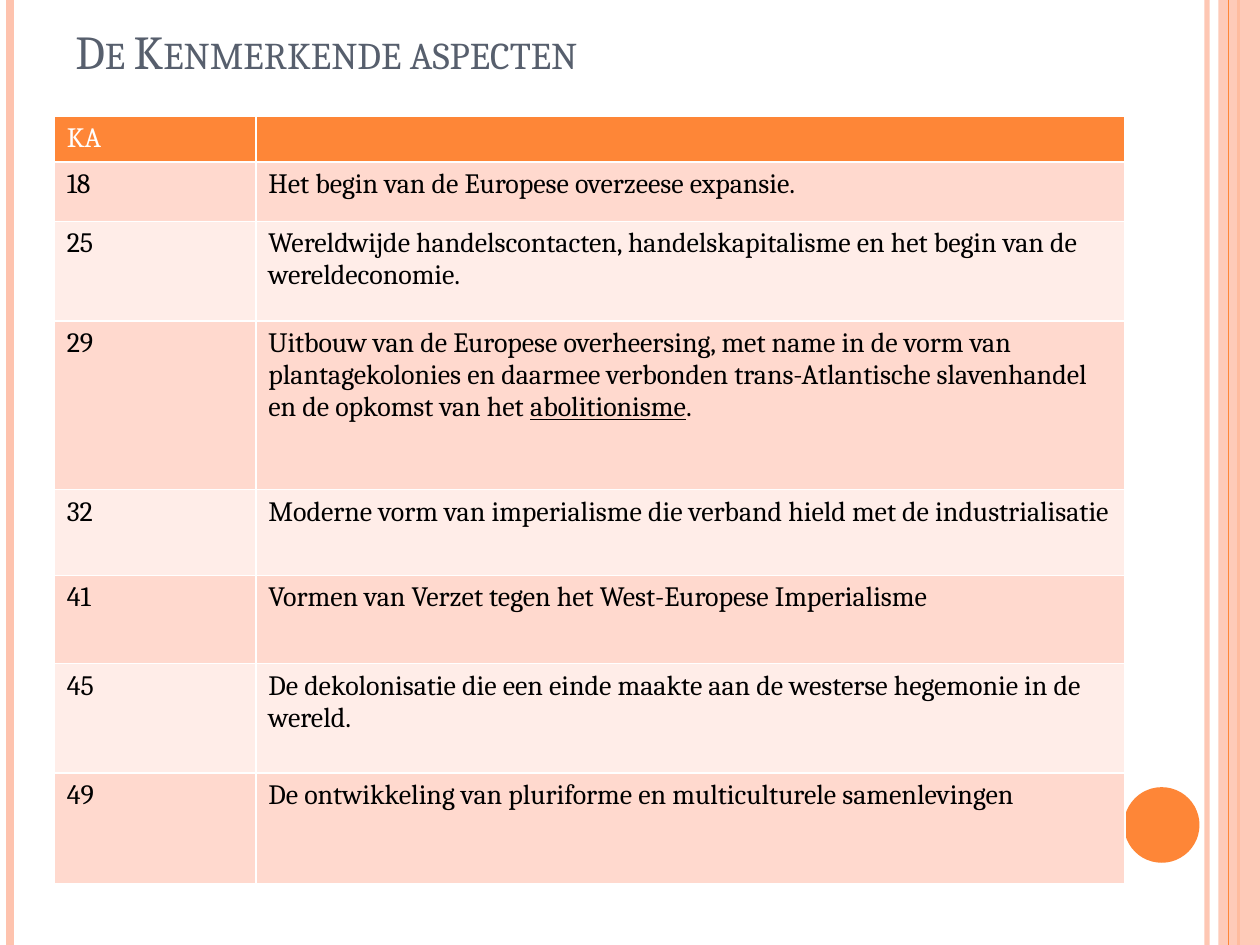
from dataclasses import dataclass

from lxml import etree
from pptx import Presentation
from pptx.dml import color as dml
from pptx.enum import shapes, text
from pptx.oxml import ns
from pptx.util import Inches, Pt

WIDTH, HEIGHT = Inches(10), Inches(7.5)
ORANGE, PEACH, WHITE, BLACK, SLATE = "FE8637", "FEC3AE", "FFFFFF", "000000", "575F6D"
BANDS = ("FFD9CE", "FFEDE8")
FONT = "Cambria"
BODY_SIZE = 16


@dataclass(frozen=True)
class Stripe:
    x: float
    points: float
    hue: str
    opacity: int = 100


@dataclass(frozen=True)
class Aspect:
    number: str
    wording: tuple[str, ...]
    height: float


OUTER_STRIPES = (
    Stripe(0.958, 3, PEACH, 93),
    Stripe(0.008, 4.5, PEACH),
    Stripe(0.983, 1.5, ORANGE),
)
INNER_STRIPE = Stripe(0.975, 0.75, ORANGE)

ASPECTS = (
    Aspect("KA", ("",), 0.35),
    Aspect("18", ("Het begin van de Europese overzeese expansie.",), 0.47),
    Aspect("25", ("Wereldwijde handelscontacten, handelskapitalisme en het begin "
                  "van de wereldeconomie.",), 0.79),
    Aspect("29", ("Uitbouw van de Europese overheersing, met name in de vorm van "
                  "plantagekolonies en daarmee verbonden trans-Atlantische "
                  "slavenhandel en de opkomst van het ", "abolitionisme", "."), 1.34),
    Aspect("32", ("Moderne vorm van imperialisme die verband hield met de "
                  "industrialisatie",), 0.68),
    Aspect("41", ("Vormen van Verzet tegen het West-Europese Imperialisme",), 0.7),
    Aspect("45", ("De dekolonisatie die een einde maakte aan de westerse hegemonie "
                  "in de wereld.",), 0.87),
    Aspect("49", ("De ontwikkeling van pluriforme en multiculturele "
                  "samenlevingen",), 0.88),
)


def rgb(value: str) -> dml.RGBColor:
    return dml.RGBColor.from_string(value)


def paint(fill, hue: str) -> None:
    fill.solid()
    fill.fore_color.rgb = rgb(hue)


def set_opacity(element, percent: int) -> None:
    if percent < 100:
        for value in element.iter(ns.qn("a:srgbClr")):
            etree.SubElement(value, ns.qn("a:alpha"), val=str(percent * 1000))


def write(paragraph, wording: str, *, size: float, hue: str,
          underline: bool = False, small_caps: bool = False) -> None:
    if not wording:
        etree.SubElement(paragraph._p, ns.qn("a:endParaRPr"), sz=str(size * 100))
        return
    run = paragraph.add_run()
    run.text = wording
    font = run.font
    font.name, font.size, font.bold = FONT, Pt(size), False
    font.color.rgb = rgb(hue)
    if underline:
        font.underline = True
    if small_caps:
        run._r.get_or_add_rPr().set("cap", "small")


def draw_stripe(slide, stripe: Stripe) -> None:
    x = round(stripe.x * WIDTH)
    rule = slide.shapes.add_connector(shapes.MSO_CONNECTOR.STRAIGHT, x, 0, x, HEIGHT)
    rule.line.width = Pt(stripe.points)
    rule.line.color.rgb = rgb(stripe.hue)
    properties = rule._element.spPr
    set_opacity(properties, stripe.opacity)
    etree.SubElement(properties, ns.qn("a:effectLst"))


def draw_solid(slide, kind, left: float, top: float, width: float, height: float,
               hue: str, opacity: int = 100) -> None:
    solid = slide.shapes.add_shape(
        kind, round(left * WIDTH), round(top * HEIGHT),
        round(width * WIDTH), round(height * HEIGHT))
    solid.shadow.inherit = False
    paint(solid.fill, hue)
    set_opacity(solid._element.spPr, opacity)
    solid.line.fill.background()


def draw_margins(slide) -> None:
    for stripe in OUTER_STRIPES:
        draw_stripe(slide, stripe)
    draw_solid(slide, shapes.MSO_SHAPE.RECTANGLE, 0.967, 0, 0.033, 1, PEACH, 87)
    draw_stripe(slide, INNER_STRIPE)
    draw_solid(slide, shapes.MSO_SHAPE.OVAL, 0.892, 0.833, 0.06, 0.08, ORANGE)


def draw_title(slide) -> None:
    heading = slide.shapes.add_textbox(
        round(0.05 * WIDTH), round(0.04 * HEIGHT),
        round(0.817 * WIDTH), round(0.05 * HEIGHT)).text_frame
    heading.word_wrap = True
    heading.vertical_anchor = text.MSO_ANCHOR.BOTTOM
    write(heading.paragraphs[0], "De Kenmerkende aspecten",
          size=27, hue=SLATE, small_caps=True)


def add_borders(cell) -> None:
    properties = cell._tc.get_or_add_tcPr()
    for position, side in enumerate("LRTB"):
        border = etree.Element(ns.qn(f"a:ln{side}"), w=str(Pt(1)))
        solid = etree.SubElement(border, ns.qn("a:solidFill"))
        etree.SubElement(solid, ns.qn("a:srgbClr"), val=WHITE)
        properties.insert(position, border)


def fill_cell(cell, pieces: tuple[str, ...], background: str, hue: str) -> None:
    paint(cell.fill, background)
    add_borders(cell)
    for position, piece in enumerate(pieces):
        write(cell.text_frame.paragraphs[0], piece, size=BODY_SIZE, hue=hue,
              underline=position == 1)


def draw_aspects(slide) -> None:
    total = sum(aspect.height for aspect in ASPECTS)
    table = slide.shapes.add_table(
        len(ASPECTS), 2, Inches(0.43), Inches(0.92),
        Inches(8.5), Inches(total)).table
    table.horz_banding = False
    for column, width in zip(table.columns, (1.6, 6.9)):
        column.width = Inches(width)
    for index, aspect in enumerate(ASPECTS):
        table.rows[index].height = Inches(aspect.height)
        background, hue = (BANDS[(index - 1) % 2], BLACK) if index else (ORANGE, WHITE)
        fill_cell(table.cell(index, 0), (aspect.number,), background, hue)
        fill_cell(table.cell(index, 1), aspect.wording, background, hue)


def main() -> None:
    deck = Presentation()
    deck.slide_width, deck.slide_height = WIDTH, HEIGHT
    slide = deck.slides.add_slide(deck.slide_layouts[6])
    paint(slide.background.fill, WHITE)
    draw_margins(slide)
    draw_title(slide)
    draw_aspects(slide)
    deck.save("out.pptx")


if __name__ == "__main__":
    main()
